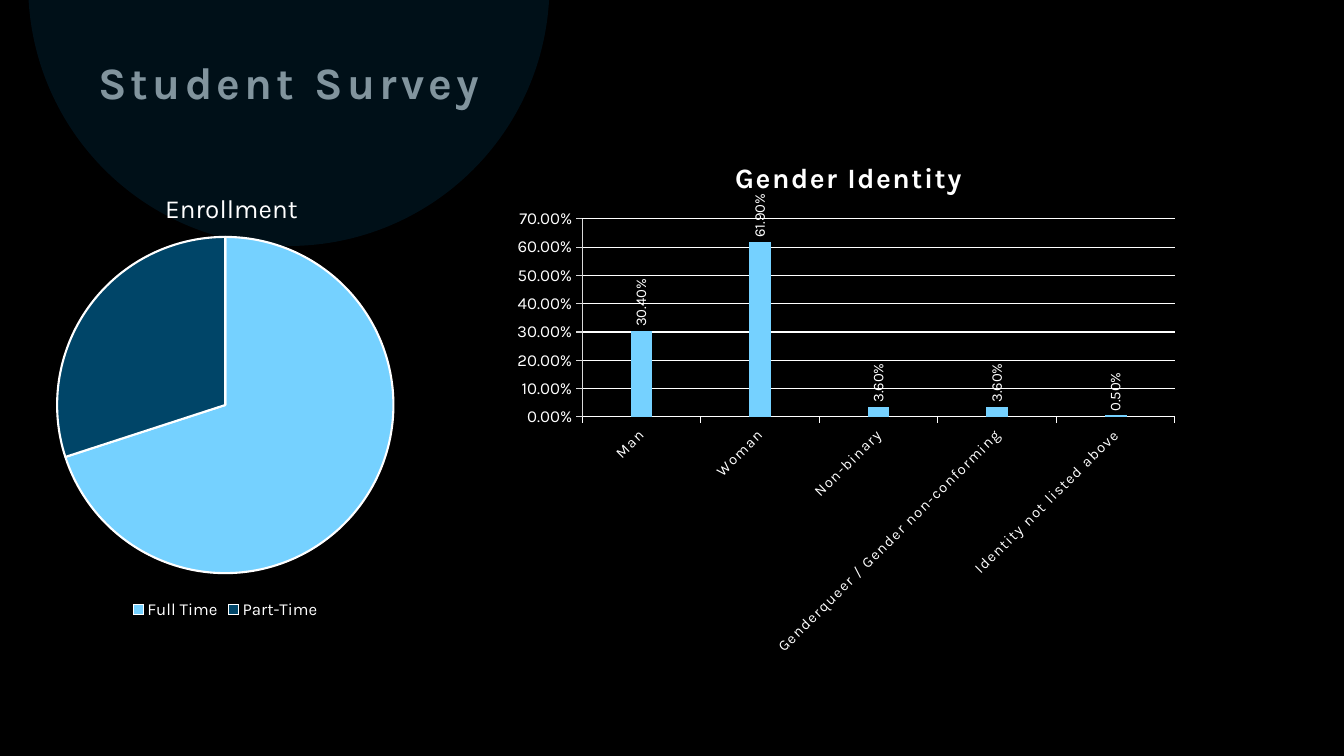
from lxml.etree import SubElement
from pptx import Presentation
from pptx.chart.data import CategoryChartData
from pptx.dml.color import RGBColor
from pptx.enum.chart import XL_CHART_TYPE, XL_LABEL_POSITION, XL_LEGEND_POSITION, XL_TICK_MARK
from pptx.enum.shapes import MSO_SHAPE
from pptx.enum.text import MSO_ANCHOR, PP_ALIGN
from pptx.oxml import parse_xml
from pptx.oxml.ns import nsdecls, qn
from pptx.util import Inches, Pt

FONT = "Karla"
COLORS = {
    "background": "000000",
    "circle": "002234",
    "heading": "F8FDFF",
    "text": "FFFFFF",
    "light": "75D1FF",
    "dark": "004568",
    "axis": "D9D9D9",
}


def rgb(name):
    return RGBColor.from_string(COLORS[name])


def style_font(font, size, color="text", bold=False):
    font.name = FONT
    font.size = Pt(size)
    font.bold = bold
    font.color.rgb = rgb(color)


def write_text(frame, text, size, color="text", bold=False, spacing=0, line_spacing=None):
    paragraph = frame.paragraphs[0]
    paragraph.alignment = PP_ALIGN.CENTER
    paragraph.line_spacing = line_spacing
    run = paragraph.add_run()
    run.text = text
    style_font(run.font, size, color, bold)
    run._r.get_or_add_rPr().set("spc", str(spacing * 100))


def style_line(line, color, width=0.75):
    line.color.rgb = rgb(color)
    line.width = Pt(width)


def manual_layout(inner=False, **places):
    target = '<c:layoutTarget val="inner"/>' if inner else ""
    modes = '<c:xMode val="edge"/><c:yMode val="edge"/>'
    values = "".join(f'<c:{key} val="{value}"/>' for key, value in places.items())
    return parse_xml(
        f'<c:layout {nsdecls("c")}><c:manualLayout>{target}{modes}{values}'
        "</c:manualLayout></c:layout>"
    )


def set_layout(parent, layout, index):
    for old in parent.findall(qn("c:layout")):
        parent.remove(old)
    parent.insert(index, layout)


def rotate_text(element, degrees):
    element.find(qn("c:txPr")).find(qn("a:bodyPr")).set("rot", str(degrees * 60000))


def add_circle(slide):
    circle = slide.shapes.add_shape(
        MSO_SHAPE.OVAL, Inches(0.28), Inches(-2.73), Inches(5.17), Inches(5.17)
    )
    circle.shadow.inherit = False
    circle.fill.solid()
    circle.fill.fore_color.rgb = rgb("circle")
    circle.line.fill.background()
    color = circle._element.spPr.find(qn("a:solidFill"))[0]
    SubElement(color, qn("a:alpha")).set("val", "48000")


def add_heading(slide, text):
    title = slide.shapes.title
    title.left, title.top = Inches(0.12), Inches(0.55)
    title.width, title.height = Inches(5.49), Inches(0.59)
    frame = title.text_frame
    frame.word_wrap = True
    frame.vertical_anchor = MSO_ANCHOR.MIDDLE
    write_text(frame, text, 32, "heading", bold=True, spacing=3, line_spacing=0.9)


def add_survey_chart(slide, kind, box, values, title, title_place, plot_place, **title_format):
    data = CategoryChartData()
    data.categories = list(values)
    data.add_series("Series 1", list(values.values()))
    chart = slide.shapes.add_chart(kind, *map(Inches, box), data).chart
    style_font(chart.font, 10)
    write_text(chart.chart_title.text_frame, title, **title_format)
    chart.chart_title.include_in_layout = False
    area = chart.element.chart
    set_layout(area.find(qn("c:title")), manual_layout(**title_place), 1)
    set_layout(area.plotArea, manual_layout(inner=True, **plot_place), 0)
    return chart


def add_enrollment_chart(slide):
    chart = add_survey_chart(
        slide,
        XL_CHART_TYPE.PIE,
        (-0.98, 1.62, 6.43, 4.57),
        {"Full Time": 70, "Part-Time": 30},
        "Enrollment",
        {"x": 0.4, "y": 0.05},
        {"x": 0.24, "y": 0.16, "w": 0.52, "h": 0.73},
        size=18.6,
    )
    for index, color in enumerate(("light", "dark")):
        point = chart.plots[0].series[0].points[index]
        point.format.fill.solid()
        point.format.fill.fore_color.rgb = rgb(color)
        style_line(point.format.line, "text", 1.5)
    chart.has_legend = True
    chart.legend.position = XL_LEGEND_POSITION.BOTTOM
    chart.legend.include_in_layout = False
    style_font(chart.legend.font, 12)


def style_axis(axis, size, line_color):
    axis.major_tick_mark = XL_TICK_MARK.OUTSIDE
    axis.minor_tick_mark = XL_TICK_MARK.NONE
    style_font(axis.tick_labels.font, size)
    style_line(axis.format.line, line_color)


def add_gender_chart(slide):
    chart = add_survey_chart(
        slide,
        XL_CHART_TYPE.COLUMN_CLUSTERED,
        (5, 1.37, 6.79, 5.31),
        {
            "Man": 0.304,
            "Woman": 0.619,
            "Non-binary": 0.036,
            "Genderqueer / Gender non-conforming": 0.036,
            "Identity not listed above": 0.005,
        },
        "Gender Identity",
        {"x": 0.33, "y": 0.03},
        {"x": 0.114, "y": 0.151, "w": 0.866, "h": 0.37},
        size=20,
        bold=True,
        spacing=1,
    )
    chart.has_legend = False
    plot = chart.plots[0]
    plot.gap_width = 444
    plot.overlap = -90
    plot.vary_by_categories = False
    series = plot.series[0]
    series.format.fill.solid()
    series.format.fill.fore_color.rgb = rgb("light")

    labels = series.data_labels
    labels.show_value = True
    labels.position = XL_LABEL_POSITION.OUTSIDE_END
    labels.number_format = "0.00%"
    labels.number_format_is_linked = False
    style_font(labels.font, 10.6)
    rotate_text(labels._element, -90)

    categories = chart.category_axis
    style_axis(categories, 10.6, "text")
    rotate_text(categories._element, -45)
    for properties in categories._element.iter(qn("a:defRPr")):
        properties.set("spc", "100")

    percent = chart.value_axis
    style_axis(percent, 12, "axis")
    percent.minimum_scale, percent.maximum_scale, percent.major_unit = 0, 0.7, 0.1
    percent.tick_labels.number_format = "0.00%"
    percent.tick_labels.number_format_is_linked = False
    style_line(percent.major_gridlines.format.line, "text")


def main():
    presentation = Presentation()
    presentation.slide_width, presentation.slide_height = Inches(13.33), Inches(7.5)
    slide = presentation.slides.add_slide(presentation.slide_layouts[5])
    slide.background.fill.solid()
    slide.background.fill.fore_color.rgb = rgb("background")
    add_circle(slide)
    add_heading(slide, "Student Survey")
    add_enrollment_chart(slide)
    add_gender_chart(slide)
    presentation.save("out.pptx")


if __name__ == "__main__":
    main()
